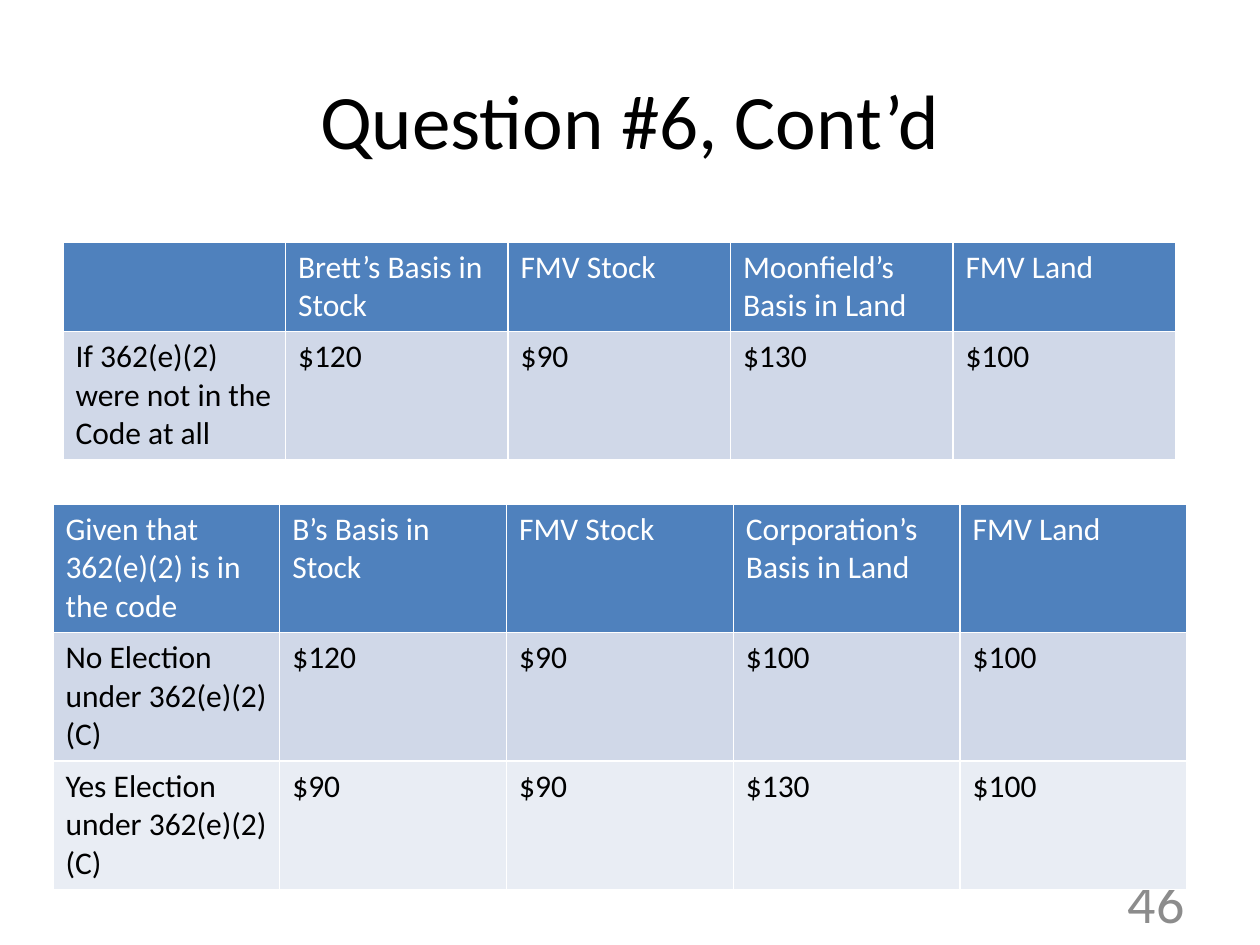
"""Build a slide with two tables comparing basis and value under 362(e)(2)."""
from pptx import Presentation
from pptx.dml.color import RGBColor
from pptx.enum.text import MSO_ANCHOR, PP_ALIGN
from pptx.util import Inches, Pt

HUES = {
    "head": "4F81BD",
    "odd": "D0D8E8",
    "even": "E9EDF4",
    "white": "FFFFFF",
    "black": "000000",
    "gray": "8C8C8C",
}


def write(frame, text, size=18, hue="black", align=PP_ALIGN.LEFT, anchor=MSO_ANCHOR.TOP):
    frame.word_wrap = True
    frame.vertical_anchor = anchor
    para = frame.paragraphs[0]
    para.alignment = align
    run = para.add_run()
    run.text = text
    run.font.name = "Calibri"
    run.font.size = Pt(size)
    run.font.bold = False
    run.font.color.rgb = RGBColor.from_string(HUES[hue])


deck = Presentation()
deck.slide_width = Inches(10)
deck.slide_height = Inches(7.5)
slide = deck.slides.add_slide(deck.slide_layouts[6])

labels = [
    ("Question #6, Cont’d", (0.5, 0.3, 9, 1.28), 44, "black", PP_ALIGN.CENTER),
    ("46", (7.17, 6.95, 2.33, 0.4), 32, "gray", PP_ALIGN.RIGHT),
]
for text, place, size, hue, align in labels:
    box = slide.shapes.add_textbox(*map(Inches, place))
    write(box.text_frame, text, size=size, hue=hue, align=align, anchor=MSO_ANCHOR.MIDDLE)

tables = [
    ((0.42, 4, 9), (1.02, 1.02, 1.02), [
        ["Given that 362(e)(2) is in the code", "B’s Basis in Stock", "FMV Stock",
         "Corporation’s Basis in Land", "FMV Land"],
        ["No Election under 362(e)(2)(C)", "$120", "$90", "$100", "$100"],
        ["Yes Election under 362(e)(2)(C)", "$90", "$90", "$130", "$100"],
    ]),
    ((0.5, 1.92, 8.83), (0.71, 1.02), [
        ["", "Brett’s Basis in Stock", "FMV Stock", "Moonfield’s Basis in Land", "FMV Land"],
        ["If 362(e)(2) were not in the Code at all", "$120", "$90", "$130", "$100"],
    ]),
]
for (left, top, width), heights, rows in tables:
    grid = slide.shapes.add_table(
        len(rows), len(rows[0]), Inches(left), Inches(top), Inches(width), Inches(sum(heights))
    ).table
    for r, (row, height, fill) in enumerate(zip(rows, heights, ("head", "odd", "even"))):
        grid.rows[r].height = Inches(height)
        for c, text in enumerate(row):
            cell = grid.cell(r, c)
            cell.fill.solid()
            cell.fill.fore_color.rgb = RGBColor.from_string(HUES[fill])
            if text:
                write(cell.text_frame, text, hue="black" if r else "white")

deck.save("out.pptx")
